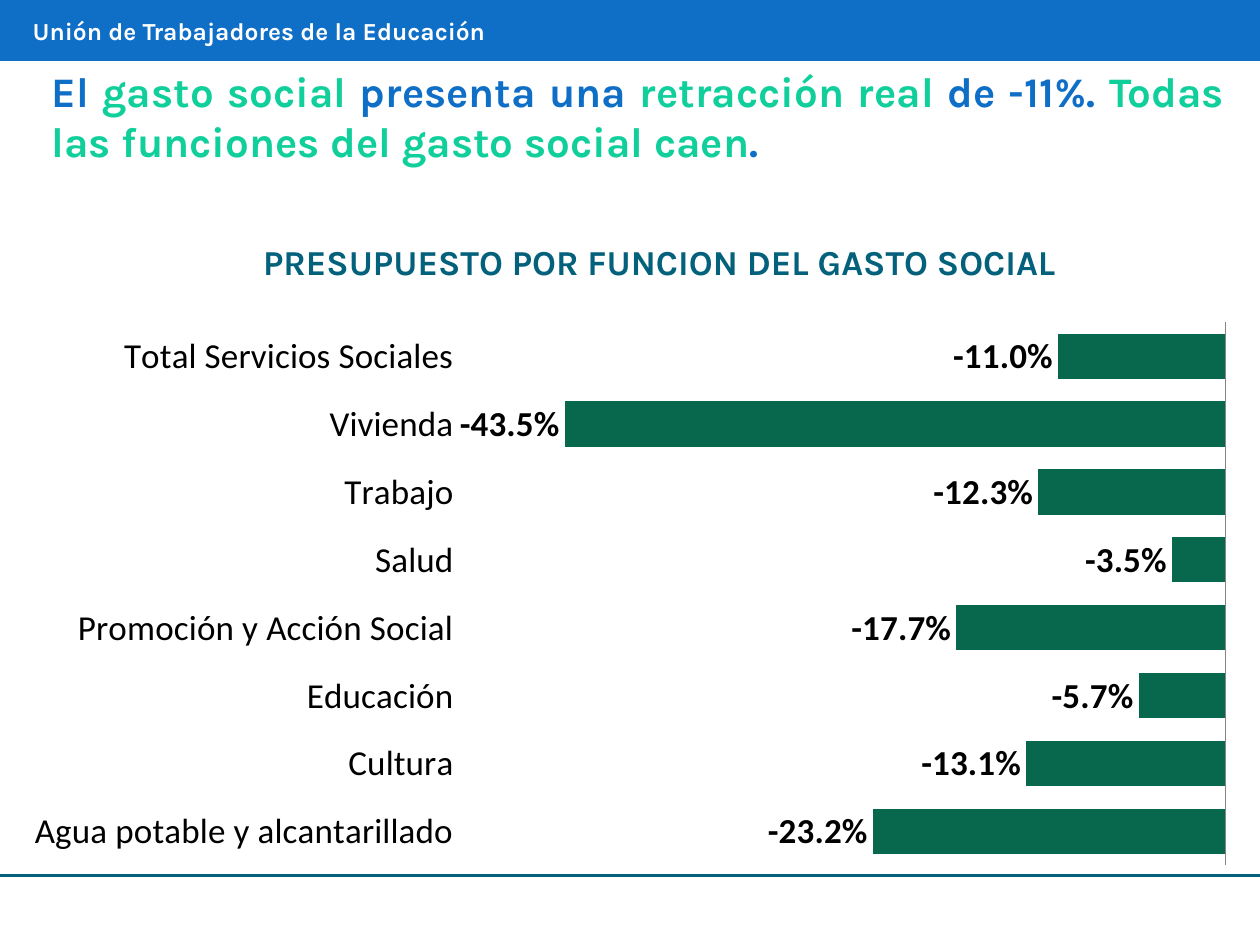
import pptx
import pptx.chart.data
import pptx.dml.color
import pptx.enum.chart
import pptx.enum.shapes
import pptx.enum.text
import pptx.oxml
import pptx.util

Cm = pptx.util.Cm
Pt = pptx.util.Pt
RGBColor = pptx.dml.color.RGBColor
Align = pptx.enum.text.PP_ALIGN
Anchor = pptx.enum.text.MSO_ANCHOR
AutoSize = pptx.enum.text.MSO_AUTO_SIZE

BLUE = RGBColor(0x0F, 0x6F, 0xC6)
MINT = RGBColor(0x10, 0xCF, 0x9B)
TEAL = RGBColor(0x04, 0x61, 0x7B)
GREEN = RGBColor(0x08, 0x68, 0x4E)
GRAY = RGBColor(0x86, 0x86, 0x86)
WHITE = RGBColor(0xFF, 0xFF, 0xFF)
BLACK = RGBColor(0, 0, 0)

SPENDING = [
    ("Agua potable y alcantarillado", -0.232),
    ("Cultura", -0.131),
    ("Educación", -0.057),
    ("Promoción y Acción Social", -0.177),
    ("Salud", -0.035),
    ("Trabajo", -0.123),
    ("Vivienda", -0.435),
    ("Total Servicios Sociales", -0.11),
]


def write(frame, runs, *, font, size, align=Align.LEFT, after=0):
    paragraph = frame.paragraphs[0]
    paragraph.alignment = align
    paragraph.space_after = Pt(after)
    for words, color in runs:
        run = paragraph.add_run()
        run.text = words
        run.font.name = font
        run.font.size = Pt(size)
        run.font.bold = True
        run.font.color.rgb = color


class SocialSpendingSlide:
    heading_font = "Karla"
    chart_font = "Calibri"
    chart_size = 20
    percent = "0.0%"

    def __init__(self, deck):
        self.slide = deck.slides.add_slide(deck.slide_layouts[6])

    def rule(self, start, end, color, width):
        line = self.slide.shapes.add_connector(
            pptx.enum.shapes.MSO_CONNECTOR.STRAIGHT, *map(Cm, start + end))
        line.line.color.rgb = color
        line.line.width = Pt(width)
        line._element.spPr.append(pptx.oxml.parse_xml(
            '<a:effectLst xmlns:a='
            '"http://schemas.openxmlformats.org/drawingml/2006/main"/>'))

    def band(self, box, color):
        band = self.slide.shapes.add_shape(
            pptx.enum.shapes.MSO_SHAPE.RECTANGLE, *map(Cm, box))
        band.shadow.inherit = False
        band.fill.solid()
        band.fill.fore_color.rgb = color
        band.line.color.rgb = color
        band.line.width = Pt(2)

    def text(self, box, runs, *, inset=None, anchor=Anchor.TOP,
             auto_size=AutoSize.SHAPE_TO_FIT_TEXT, **style):
        frame = self.slide.shapes.add_textbox(*map(Cm, box)).text_frame
        frame.word_wrap = True
        frame.auto_size = auto_size
        frame.vertical_anchor = anchor
        if inset is not None:
            frame.margin_left = frame.margin_right = Cm(inset)
            frame.margin_top = frame.margin_bottom = Cm(inset)
        write(frame, runs, font=self.heading_font, **style)

    def bars(self, box, name, rows, color, lowest):
        data = pptx.chart.data.CategoryChartData(number_format=self.percent)
        data.categories = [label for label, _ in rows]
        data.add_series(name, [value for _, value in rows])
        chart = self.slide.shapes.add_chart(
            pptx.enum.chart.XL_CHART_TYPE.BAR_CLUSTERED,
            *map(Cm, box), data).chart
        chart.has_legend = False
        chart.has_title = False
        chart.font.name = self.chart_font
        chart.font.size = Pt(self.chart_size)
        chart.font.color.rgb = BLACK

        functions = chart.category_axis
        functions.tick_label_position = (
            pptx.enum.chart.XL_TICK_LABEL_POSITION.LOW)
        functions.major_tick_mark = pptx.enum.chart.XL_TICK_MARK.NONE
        functions.format.line.color.rgb = GRAY
        functions.format.line.width = Pt(0.75)

        change = chart.value_axis
        change.minimum_scale = lowest
        change.maximum_scale = 0
        change.has_major_gridlines = False
        change.visible = False

        plot = chart.plots[0]
        plot.gap_width = 50
        plot.vary_by_categories = False
        series = plot.series[0]
        series.invert_if_negative = False
        series.format.fill.solid()
        series.format.fill.fore_color.rgb = color
        labels = series.data_labels
        labels.show_value = True
        labels.position = pptx.enum.chart.XL_LABEL_POSITION.OUTSIDE_END
        labels.number_format = self.percent
        labels.number_format_is_linked = False
        labels.font.name = self.chart_font
        labels.font.size = Pt(self.chart_size)
        labels.font.bold = True
        labels.font.color.rgb = BLACK


def main():
    deck = pptx.Presentation()
    deck.slide_width = Cm(25.4)
    deck.slide_height = Cm(19.05)
    page = SocialSpendingSlide(deck)

    page.rule((0, 17.65), (25.4, 17.65), TEAL, 1.5)
    page.text(
        (0.79, 1.19, 24.13, 2.31),
        [("El ", BLUE), ("gasto social ", MINT), ("presenta una ", BLUE),
         ("retracción real", MINT), (" de -11%. ", BLUE),
         ("Todas las funciones del gasto social caen", MINT), (".", BLUE)],
        size=24, align=Align.JUSTIFY, after=12)
    page.band((0, 0, 25.4, 1.19), BLUE)
    page.text((0.41, 0.2, 23.27, 0.86),
              [("Unión de Trabajadores de la Educación", WHITE)], size=14)
    page.text((2.97, 4.57, 20.65, 1.4),
              [("PRESUPUESTO POR FUNCION DEL GASTO SOCIAL", TEAL)],
              size=20, align=Align.CENTER, inset=0.25,
              anchor=Anchor.MIDDLE, auto_size=AutoSize.NONE)
    page.bars((0.2, 6.27, 25, 11.4), "Series 1", SPENDING, GREEN, -0.5)

    deck.save("out.pptx")


if __name__ == "__main__":
    main()
